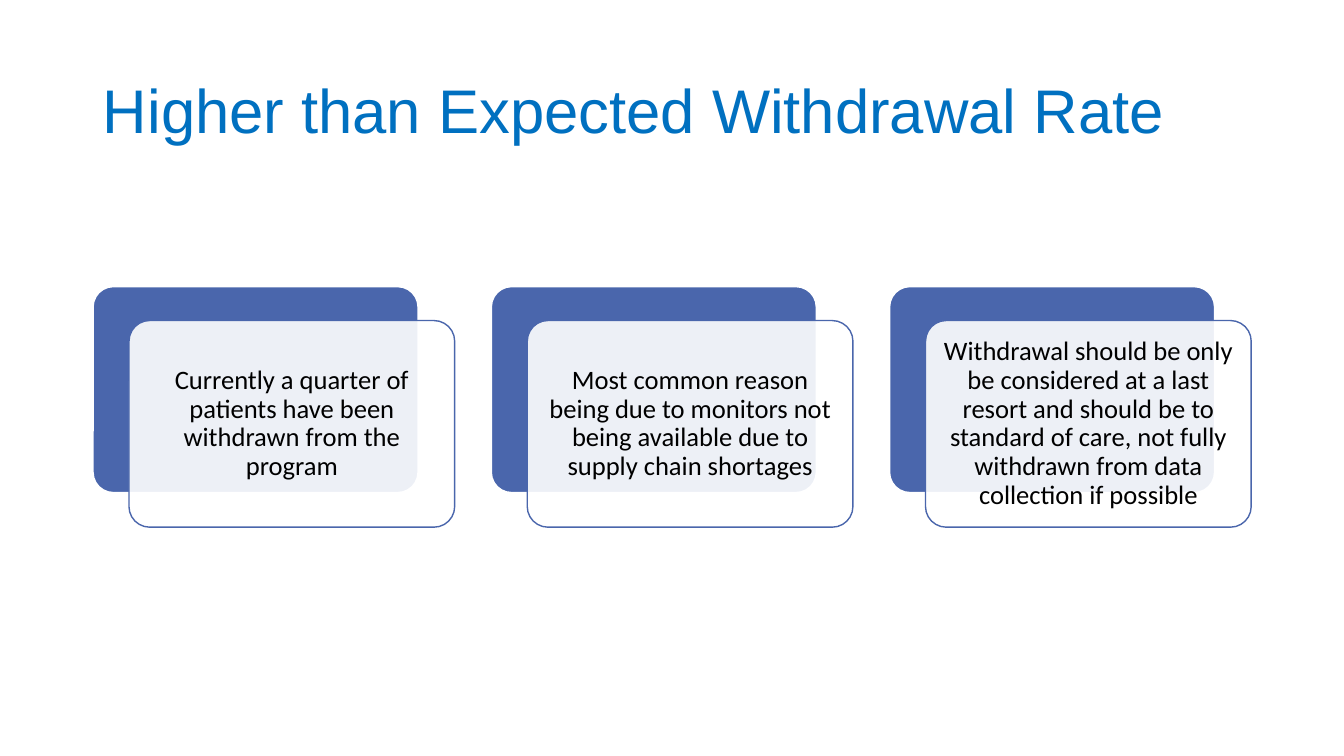
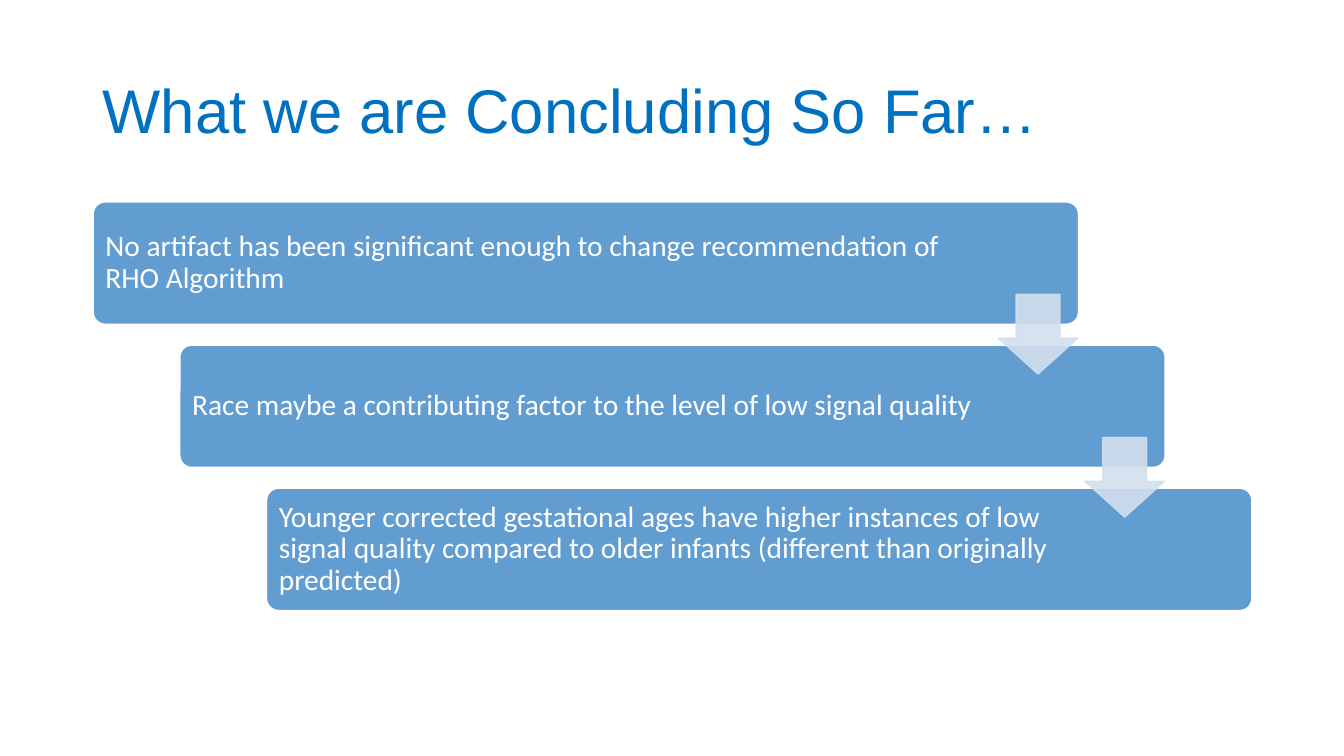
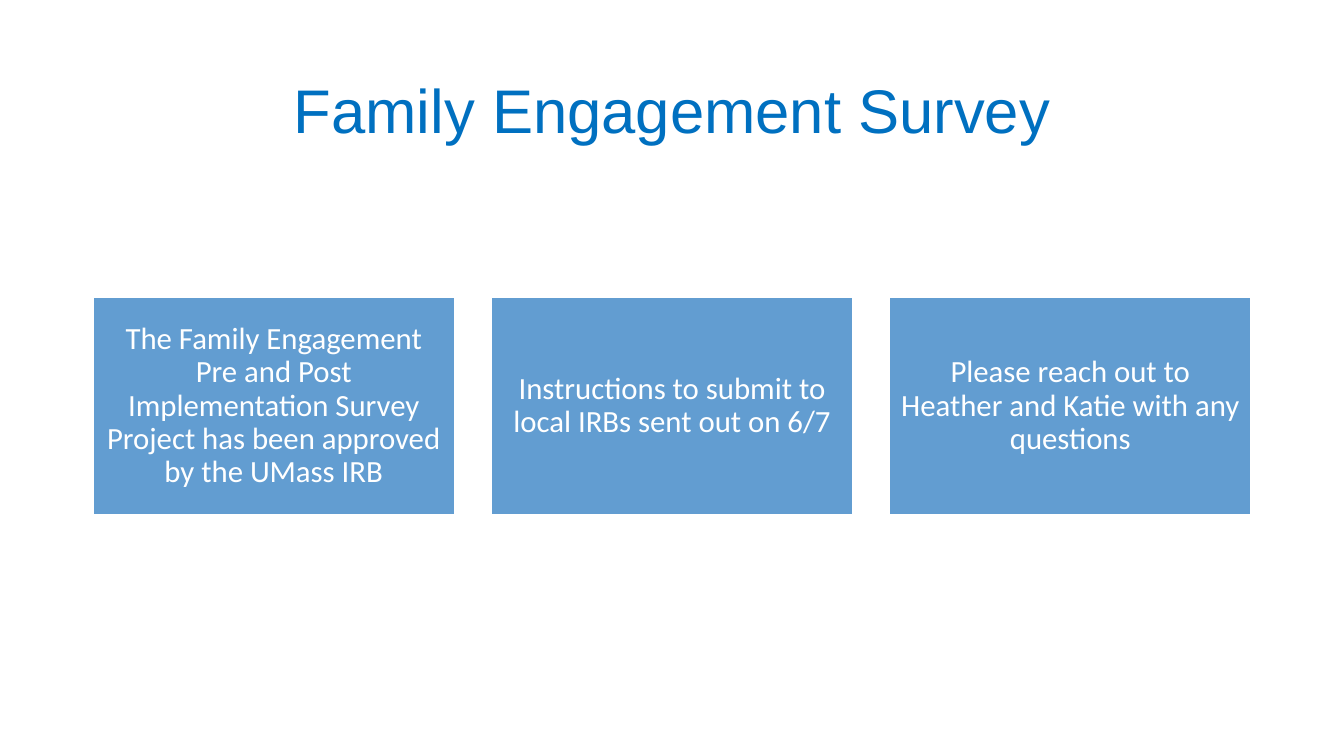
from dataclasses import dataclass
from typing import Optional

from lxml import etree
from pptx import Presentation
from pptx.dml.color import RGBColor
from pptx.enum import shapes, text
from pptx.oxml import ns
from pptx.util import Inches, Pt

TITLE_BLUE = RGBColor(0x00, 0x70, 0xC0)
CARD_BLUE = RGBColor(0x4A, 0x66, 0xAC)
BOX_BLUE = RGBColor(0x62, 0x9D, 0xD1)
ARROW_BLUE = RGBColor(0xD3, 0xDF, 0xEE)
WHITE = RGBColor(0xFF, 0xFF, 0xFF)
BLACK = RGBColor(0x00, 0x00, 0x00)

LEFT, ALIGN_CENTER = text.PP_ALIGN.LEFT, text.PP_ALIGN.CENTER
MARGIN_LEFT = 0.92
COLUMN_STEP = 3.95
TITLE_ONLY_LAYOUT = 5


@dataclass(frozen=True)
class ShapeStyle:
    kind: shapes.MSO_SHAPE
    fill: RGBColor
    line: RGBColor
    line_width: float = 1.5
    adjustments: tuple[float, ...] = ()
    fill_opacity: int = 100
    line_opacity: int = 100


@dataclass(frozen=True)
class TextStyle:
    size: int
    color: RGBColor
    align: text.PP_ALIGN
    inset: float = 0.09
    font: str = "Calibri"


@dataclass(frozen=True)
class Step:
    message: str
    right_inset: float


ROUND = shapes.MSO_SHAPE.ROUNDED_RECTANGLE
CARD_BACK = ShapeStyle(ROUND, CARD_BLUE, WHITE, adjustments=(0.1,))
CARD_FRONT = ShapeStyle(ROUND, WHITE, CARD_BLUE, 1, (0.1,), fill_opacity=90)
STEP_BAR = ShapeStyle(ROUND, BOX_BLUE, WHITE, adjustments=(0.1,))
STEP_ARROW = ShapeStyle(shapes.MSO_SHAPE.DOWN_ARROW, ARROW_BLUE, ARROW_BLUE, 1,
                        (0.55, 0.45), fill_opacity=90, line_opacity=90)
SURVEY_BOX = ShapeStyle(shapes.MSO_SHAPE.RECTANGLE, BOX_BLUE, WHITE)

CARD_TEXT = TextStyle(19, BLACK, ALIGN_CENTER, inset=0.08)
STEP_TEXT = TextStyle(21, WHITE, LEFT)
SURVEY_TEXT = TextStyle(22, WHITE, ALIGN_CENTER)

WITHDRAWAL_CARDS = (
    "Currently a quarter of patients have been withdrawn from the program",
    "Most common reason being due to monitors not being available due to "
    "supply chain shortages",
    "Withdrawal should be only be considered at a last resort and should be to "
    "standard of care, not fully withdrawn from data collection if possible",
)
CONCLUSIONS = (
    Step("No artifact has been significant enough to change recommendation of "
         "RHO Algorithm", 1.34),
    Step("Race maybe a contributing factor to the level of low signal quality", 1.75),
    Step("Younger corrected gestational ages have higher instances of low signal "
         "quality compared to older infants (different than originally predicted)", 1.75),
)
SURVEY_NOTES = (
    "The Family Engagement Pre and Post Implementation Survey Project has been "
    "approved by the UMass IRB",
    "Instructions to submit to local IRBs sent out on 6/7",
    "Please reach out to Heather and Katie with any questions",
)


def set_opacity(color_fill, percent: int) -> None:
    """Add an alpha value to the colour inside a solid fill element."""
    if percent < 100:
        color = color_fill.find(ns.qn("a:srgbClr"))
        etree.SubElement(color, ns.qn("a:alpha"), val=str(percent * 1000))


def add_styled_shape(slide, style: ShapeStyle, left: float, top: float,
                     width: float, height: float):
    shape = slide.shapes.add_shape(style.kind, Inches(left), Inches(top),
                                   Inches(width), Inches(height))
    shape.shadow.inherit = False
    for index, value in enumerate(style.adjustments):
        shape.adjustments[index] = value
    shape.fill.solid()
    shape.fill.fore_color.rgb = style.fill
    shape.line.color.rgb = style.line
    shape.line.width = Pt(style.line_width)
    properties = shape.element.spPr
    set_opacity(properties.find(ns.qn("a:solidFill")), style.fill_opacity)
    set_opacity(properties.find(f"{ns.qn('a:ln')}/{ns.qn('a:solidFill')}"),
                style.line_opacity)
    return shape


def write_text(shape, message: str, style: TextStyle,
               right_inset: Optional[float] = None) -> None:
    frame = shape.text_frame
    frame.text = message
    frame.word_wrap = True
    frame.auto_size = text.MSO_AUTO_SIZE.NONE
    frame.vertical_anchor = text.MSO_ANCHOR.MIDDLE
    frame.margin_left = frame.margin_top = frame.margin_bottom = Inches(style.inset)
    frame.margin_right = Inches(right_inset or style.inset)
    paragraph = frame.paragraphs[0]
    paragraph.alignment = style.align
    paragraph.line_spacing = 0.9
    for run in paragraph.runs:
        run.font.name = style.font
        run.font.size = Pt(style.size)
        run.font.color.rgb = style.color


def add_titled_slide(presentation, title: str, align: text.PP_ALIGN = LEFT):
    slide = presentation.slides.add_slide(presentation.slide_layouts[TITLE_ONLY_LAYOUT])
    shape = slide.shapes.title
    shape.left, shape.top = Inches(MARGIN_LEFT), Inches(0.4)
    shape.width, shape.height = Inches(11.5), Inches(1.45)
    write_text(shape, title, TextStyle(44, TITLE_BLUE, align, 0.1, "Arial"))
    return slide


def build_withdrawal_slide(presentation) -> None:
    slide = add_titled_slide(presentation, "Higher than Expected Withdrawal Rate")
    width, height = 3.23, 2.05
    for index, message in enumerate(WITHDRAWAL_CARDS):
        left = MARGIN_LEFT + index * COLUMN_STEP
        add_styled_shape(slide, CARD_BACK, left, 2.84, width, height)
        front = add_styled_shape(slide, CARD_FRONT, left + 0.36, 3.18, width, height)
        write_text(front, message, CARD_TEXT)


def build_conclusions_slide(presentation) -> None:
    slide = add_titled_slide(presentation, "What we are Concluding So Far…")
    step_x, step_y = 0.86, 1.42
    for index, step in enumerate(CONCLUSIONS):
        bar = add_styled_shape(slide, STEP_BAR, MARGIN_LEFT + index * step_x,
                               2 + index * step_y, 9.78, 1.22)
        write_text(bar, step.message, STEP_TEXT, step.right_inset)
    # Arrows lie over the bars and lead from each one to the next
    for index in range(len(CONCLUSIONS) - 1):
        add_styled_shape(slide, STEP_ARROW, 9.9 + index * step_x,
                         2.92 + index * step_y, 0.79, 0.79)


def build_survey_slide(presentation) -> None:
    slide = add_titled_slide(presentation, "Family Engagement Survey", ALIGN_CENTER)
    for index, message in enumerate(SURVEY_NOTES):
        box = add_styled_shape(slide, SURVEY_BOX, MARGIN_LEFT + index * COLUMN_STEP,
                               2.95, 3.59, 2.16)
        write_text(box, message, SURVEY_TEXT)


def main() -> None:
    presentation = Presentation()
    presentation.slide_width = Inches(13.33)
    presentation.slide_height = Inches(7.5)
    build_withdrawal_slide(presentation)
    build_conclusions_slide(presentation)
    build_survey_slide(presentation)
    presentation.save("out.pptx")


if __name__ == "__main__":
    main()
